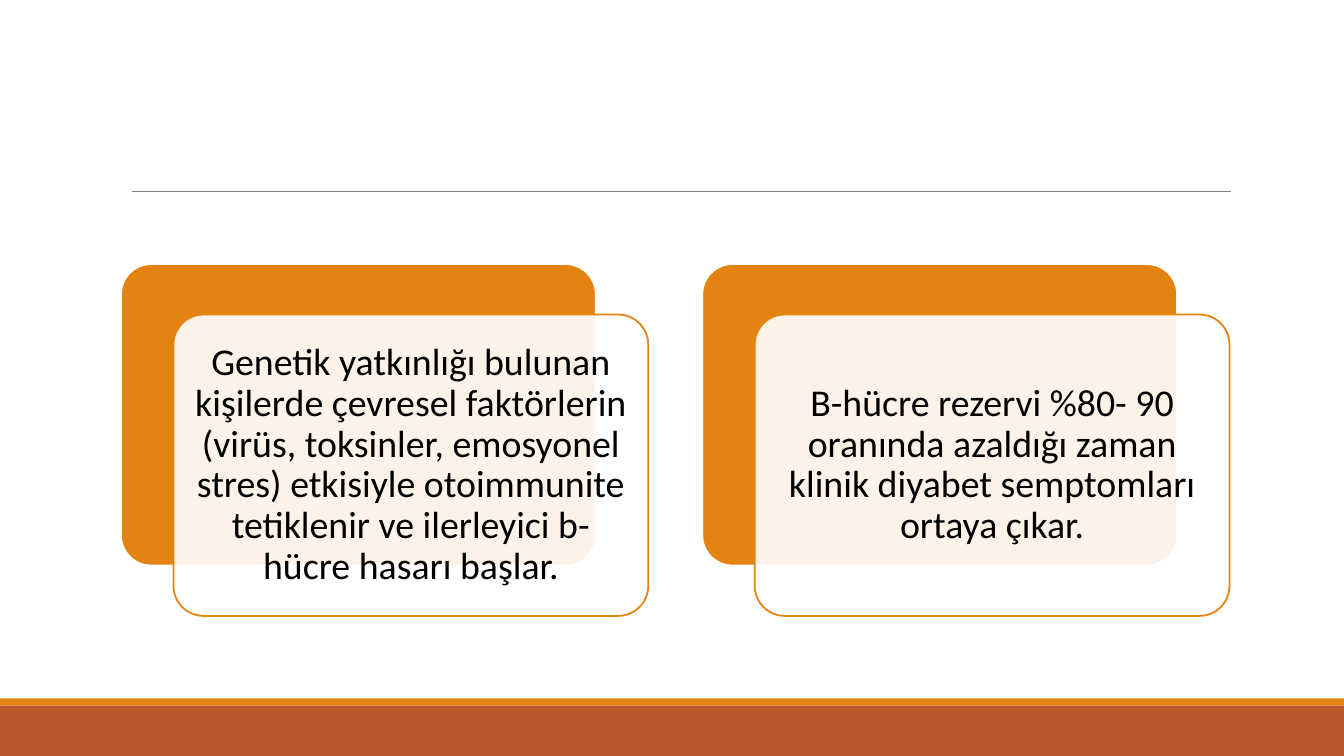
from pptx import Presentation
from pptx.dml.color import RGBColor
from pptx.enum.shapes import MSO_CONNECTOR, MSO_SHAPE
from pptx.enum.text import MSO_ANCHOR, PP_ALIGN
from pptx.oxml.ns import qn
from pptx.util import Inches, Pt
from lxml.etree import SubElement

ORANGE = RGBColor(0xE4, 0x83, 0x12)
RUST = RGBColor(0xBD, 0x58, 0x2C)
GRAY = RGBColor(0x80, 0x80, 0x80)
WHITE = RGBColor(0xFF, 0xFF, 0xFF)
BLACK = RGBColor(0x00, 0x00, 0x00)

CARD_W, CARD_H = 4.71, 2.99
CARD_LEFT, CARD_TOP, CARD_PITCH = 1.2, 2.62, 5.765
OFFSET_X, OFFSET_Y = 0.52, 0.5

TEXTS = [
    "Genetik yatkınlığı bulunan kişilerde çevresel faktörlerin (virüs, toksinler, "
    "emosyonel stres) etkisiyle otoimmunite tetiklenir ve ilerleyici b-hücre hasarı başlar.",
    "B-hücre rezervi %80- 90 oranında azaldığı zaman klinik diyabet semptomları ortaya çıkar.",
]


def add_box(s, kind, left, top, width, height, fill, line=None):
    sp = s.shapes.add_shape(kind, Inches(left), Inches(top), Inches(width), Inches(height))
    sp.shadow.inherit = False
    sp.fill.solid()
    sp.fill.fore_color.rgb = fill
    if line is None:
        sp.line.fill.background()
    else:
        sp.line.color.rgb = line
        sp.line.width = Pt(1.25)
    return sp


def add_rounded(s, left, top, fill, line):
    sp = add_box(s, MSO_SHAPE.ROUNDED_RECTANGLE, left, top, CARD_W, CARD_H, fill, line)
    sp.adjustments[0] = 0.1
    return sp


def set_opacity(sp, percent):
    color = sp.fill._xPr.find(qn("a:solidFill"))[0]
    SubElement(color, qn("a:alpha")).set("val", str(percent * 1000))


def write_text(sp, text):
    tf = sp.text_frame
    tf.word_wrap = True
    tf.vertical_anchor = MSO_ANCHOR.MIDDLE
    tf.margin_left = tf.margin_right = tf.margin_top = tf.margin_bottom = Inches(0.11)
    tf.text = text
    p = tf.paragraphs[0]
    p.alignment = PP_ALIGN.CENTER
    p.line_spacing = 0.9
    r = p.runs[0]
    r.font.name = "Calibri"
    r.font.size = Pt(27)
    r.font.color.rgb = BLACK


def add_card(s, left, text):
    add_rounded(s, left, CARD_TOP, ORANGE, WHITE)
    front = add_rounded(s, left + OFFSET_X, CARD_TOP + OFFSET_Y, WHITE, ORANGE)
    set_opacity(front, 90)
    write_text(front, text)


def add_rule(s, left, right, top):
    line = s.shapes.add_connector(
        MSO_CONNECTOR.STRAIGHT, Inches(left), Inches(top), Inches(right), Inches(top))
    line.line.color.rgb = GRAY
    line.line.width = Pt(0.5)
    SubElement(line._element.spPr, qn("a:effectLst"))


def main():
    prs = Presentation()
    prs.slide_width, prs.slide_height = Inches(13.33), Inches(7.5)
    s = prs.slides.add_slide(prs.slide_layouts[6])
    add_box(s, MSO_SHAPE.RECTANGLE, 0, 7, 13.33, 0.5, RUST)
    add_box(s, MSO_SHAPE.RECTANGLE, 0, 6.93, 13.33, 0.07, ORANGE)
    add_rule(s, 1.31, 12.21, 1.9)
    for i, text in enumerate(TEXTS):
        add_card(s, CARD_LEFT + i * CARD_PITCH, text)
    prs.save("out.pptx")


if __name__ == "__main__":
    main()
